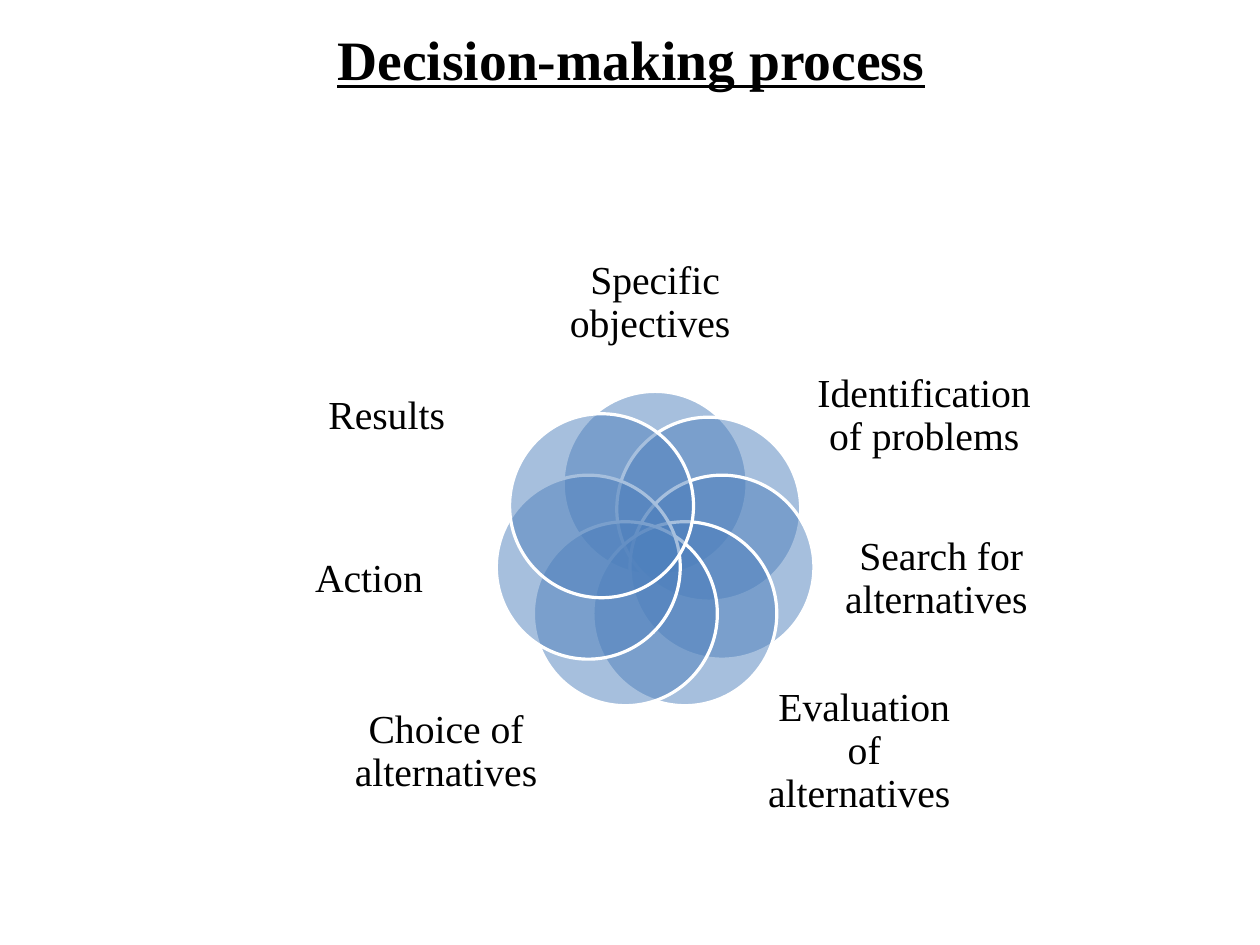
from dataclasses import dataclass
from math import cos, pi, sin

from lxml.etree import SubElement
from pptx import Presentation
from pptx.dml.color import RGBColor
from pptx.enum.shapes import MSO_SHAPE
from pptx.enum.text import MSO_ANCHOR, PP_ALIGN
from pptx.oxml.ns import qn
from pptx.util import Inches, Pt


@dataclass(frozen=True)
class Theme:
    """Colours, font and type sizes of the slide."""

    font: str = "Times New Roman"
    ink: RGBColor = RGBColor(0x00, 0x00, 0x00)
    petal: RGBColor = RGBColor(0x4F, 0x81, 0xBD)
    outline: RGBColor = RGBColor(0xFF, 0xFF, 0xFF)
    title_size: Pt = Pt(35)
    label_size: Pt = Pt(25)
    outline_width: Pt = Pt(2)
    petal_opacity: int = 50


THEME = Theme()
TITLE_BOX = (0.77, 0.22, 9.51, 1.2)
FLOWER_BOX = (2.37, 2.16, 6.73, 4.95)
HUB_DROP = 2.67
ORBIT = 0.6
PETAL_SIZE = 1.61

# Each step: text, label box within the flower box, lift of its petal.
STEPS = [
    ("Specific objectives ", (2.44, 0, 1.85, 0.99), 0),
    ("Identification of problems", (4.77, 0.94, 1.9, 1.09), 0),
    ("Search for alternatives ", (5.01, 2.33, 1.72, 1.16), 0),
    ("Evaluation of alternatives ", (4.27, 3.89, 1.85, 1.06), 0),
    ("Choice of alternatives", (0.61, 3.89, 1.85, 1.06), 0),
    ("Action", (0, 2.33, 1.72, 1.16), 0),
    ("Results", (0.14, 0.94, 1.75, 1.09), 0.03),
]


def write_text(shape, text, size, anchor):
    """Fill a shape with one centred paragraph and return it."""
    frame = shape.text_frame
    frame.word_wrap = True
    frame.vertical_anchor = anchor
    frame.margin_left = frame.margin_right = 0
    frame.margin_top = frame.margin_bottom = 0
    frame.text = text
    para = frame.paragraphs[0]
    para.alignment = PP_ALIGN.CENTER
    para.font.name = THEME.font
    para.font.size = size
    para.font.color.rgb = THEME.ink
    return para


def add_title(page, box):
    """Place the underlined heading in the title placeholder."""
    title = page.shapes.title
    title.left, title.top, title.width, title.height = map(Inches, box)
    para = write_text(title, "Decision-making process", THEME.title_size, MSO_ANCHOR.TOP)
    para.font.bold = True
    para.font.underline = True


def add_petal(page, centre_x, centre_y):
    """Draw one translucent circle around a centre."""
    left, top = centre_x - PETAL_SIZE / 2, centre_y - PETAL_SIZE / 2
    petal = page.shapes.add_shape(
        MSO_SHAPE.OVAL, *map(Inches, (left, top, PETAL_SIZE, PETAL_SIZE))
    )
    petal.shadow.inherit = False
    petal.fill.solid()
    petal.fill.fore_color.rgb = THEME.petal
    colour = petal.fill._xPr.find(qn("a:solidFill"))[0]
    SubElement(colour, qn("a:alpha")).set("val", str(THEME.petal_opacity * 1000))
    petal.line.color.rgb = THEME.outline
    petal.line.width = THEME.outline_width


def add_label(page, text, box):
    """Write the name of one step."""
    label = page.shapes.add_textbox(*map(Inches, box))
    para = write_text(label, text, THEME.label_size, MSO_ANCHOR.MIDDLE)
    para.line_spacing = 0.9


def add_flower(page, box):
    """Spread the steps clockwise around the hub of the box."""
    left, top, width, _ = box
    hub_x, hub_y = left + width / 2, top + HUB_DROP
    for index, (text, (x, y, label_width, label_height), lift) in enumerate(STEPS):
        angle = 2 * pi * index / len(STEPS)
        add_petal(page, hub_x + ORBIT * sin(angle), hub_y - ORBIT * cos(angle) - lift)
        add_label(page, text, (left + x, top + y, label_width, label_height))


def main():
    """Build and save the slide."""
    deck = Presentation()
    deck.slide_width, deck.slide_height = Inches(11.03), Inches(8.27)
    page = deck.slides.add_slide(deck.slide_layouts[5])
    add_title(page, TITLE_BOX)
    add_flower(page, FLOWER_BOX)
    deck.save("out.pptx")


if __name__ == "__main__":
    main()
